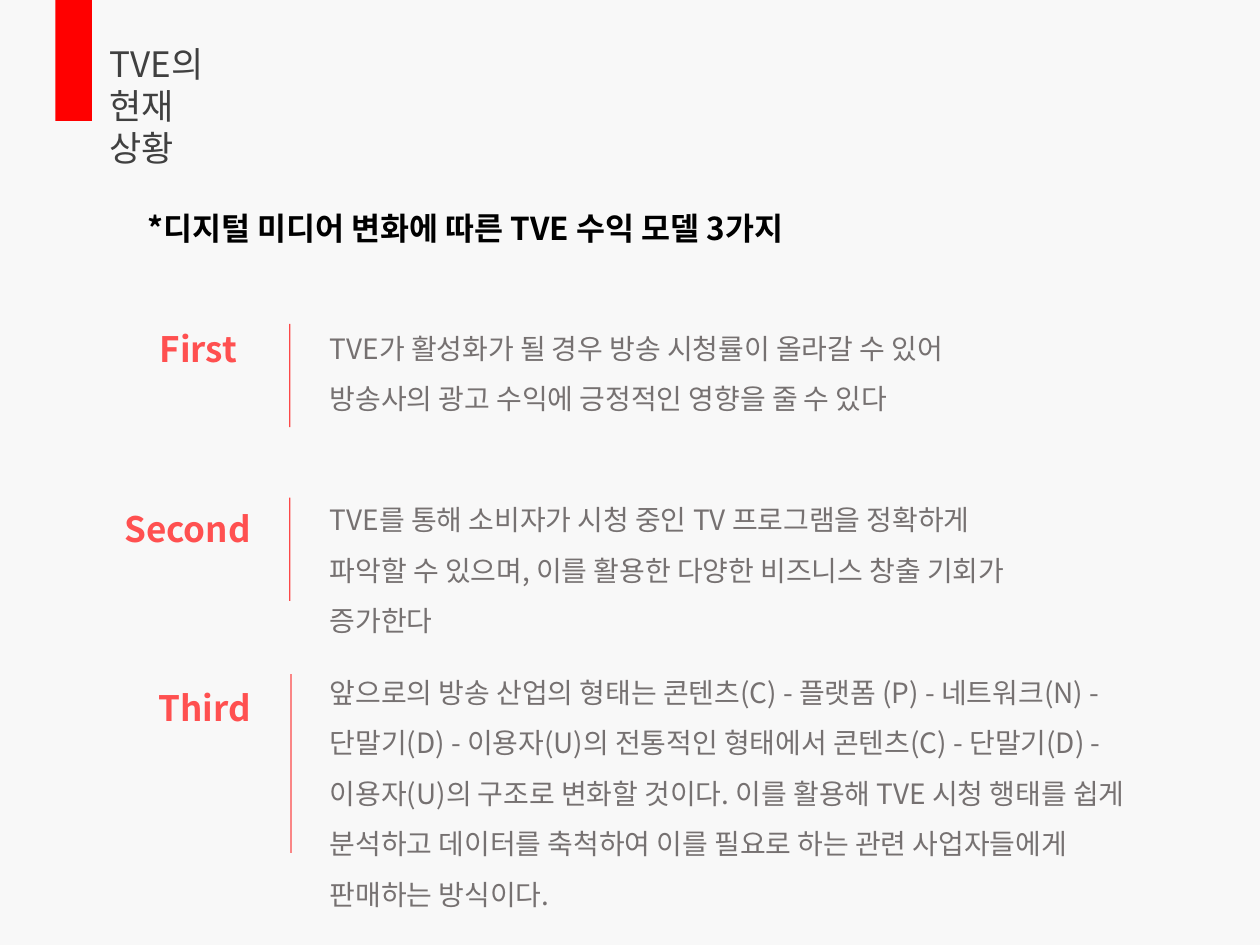
from lxml.etree import SubElement
from pptx import Presentation
from pptx.dml.color import RGBColor
from pptx.enum.shapes import MSO_CONNECTOR, MSO_SHAPE
from pptx.enum.text import MSO_ANCHOR, MSO_AUTO_SIZE, PP_ALIGN
from pptx.oxml.ns import qn
from pptx.util import Inches, Pt

FONT = "Noto Sans CJK KR"
rgb = RGBColor.from_string


def write(box, lines, size, color, bold=False, align=PP_ALIGN.LEFT, spacing=1.5):
    frame = box.text_frame
    frame.word_wrap = True
    frame.auto_size = MSO_AUTO_SIZE.NONE
    frame.vertical_anchor = MSO_ANCHOR.TOP
    frame.text = "\n".join(lines)
    for paragraph in frame.paragraphs:
        paragraph.alignment = align
        paragraph.line_spacing = spacing
        font = paragraph.font
        font.size, font.bold, font.name = Pt(size), bold, FONT
        font.color.rgb = rgb(color)
        # Korean glyphs take the East Asian typeface
        defaults = paragraph._p.pPr.find(qn("a:defRPr"))
        SubElement(defaults, qn("a:ea"), typeface=FONT)


deck = Presentation()
deck.slide_width, deck.slide_height = Inches(10), Inches(7.5)
slide = deck.slides.add_slide(deck.slide_layouts[5])
slide.background.fill.solid()
slide.background.fill.fore_color.rgb = rgb("F8F8F8")
shapes = slide.shapes

# Heading with its red tab
tab = shapes.add_shape(MSO_SHAPE.RECTANGLE, Inches(0.44), 0, Inches(0.29), Inches(0.96))
tab.shadow.inherit = False
tab.fill.solid()
tab.fill.fore_color.rgb = rgb("FF0000")
tab.line.fill.background()

title = shapes.title
title.left, title.top = Inches(0.77), Inches(0.29)
title.width, title.height = Inches(1.27), Inches(0.77)
write(title, ["TVE의", "현재 상황"], 20, "404040", spacing=1.0)

subtitle = shapes.add_textbox(Inches(1.07), Inches(1.46), Inches(7.35), Inches(0.56))
write(subtitle, ["*디지털 미디어 변화에 따른 TVE 수익 모델 3가지"], 18, "000000", bold=True)

# Revenue models: label, label left and top, rule x, top and height,
# body top, width and height, body lines
models = [
    ("First", -0.06, 2.38, 2.3, 2.57, 0.82, 2.45, 5.65, 1.33,
     ["TVE가 활성화가 될 경우 방송 시청률이 올라갈 수 있어",
      "방송사의 광고 수익에 긍정적인 영향을 줄 수 있다"]),
    ("Second", 0.05, 3.81, 2.3, 3.95, 0.82, 3.81, 5.87, 0.91,
     ["TVE를 통해 소비자가 시청 중인 TV 프로그램을 정확하게 파악할 수 있으며, "
      "이를 활용한 다양한 비즈니스 창출 기회가 증가한다"]),
    ("Third", 0.05, 5.23, 2.31, 5.35, 1.42, 5.18, 6.9, 1.72,
     ["앞으로의 방송 산업의 형태는 콘텐츠(C) - 플랫폼 (P) - 네트워크(N) - "
      "단말기(D) - 이용자(U)의 전통적인 형태에서 콘텐츠(C) - 단말기(D) - "
      "이용자(U)의 구조로 변화할 것이다. 이를 활용해 TVE 시청 행태를 쉽게 "
      "분석하고 데이터를 축척하여 이를 필요로 하는 관련 사업자들에게 "
      "판매하는 방식이다."]),
]
for (name, label_left, label_top, rule_x, rule_top, rule_height,
     body_top, body_width, body_height, lines) in models:
    label = shapes.add_textbox(Inches(label_left), Inches(label_top), Inches(2.04), Inches(0.61))
    write(label, [name], 20, "FF5050", bold=True, align=PP_ALIGN.RIGHT)

    rule = shapes.add_connector(MSO_CONNECTOR.STRAIGHT, Inches(rule_x), Inches(rule_top),
                                Inches(rule_x), Inches(rule_top + rule_height))
    rule.line.width = Pt(0.75)
    rule.line.color.rgb = rgb("FF0000")
    tint = rule._element.spPr.find(".//" + qn("a:srgbClr"))
    SubElement(tint, qn("a:alpha"), val="70000")
    SubElement(rule._element.spPr, qn("a:effectLst"))

    body = shapes.add_textbox(Inches(2.52), Inches(body_top), Inches(body_width), Inches(body_height))
    write(body, lines, 16, "767171")

deck.save("out.pptx")
